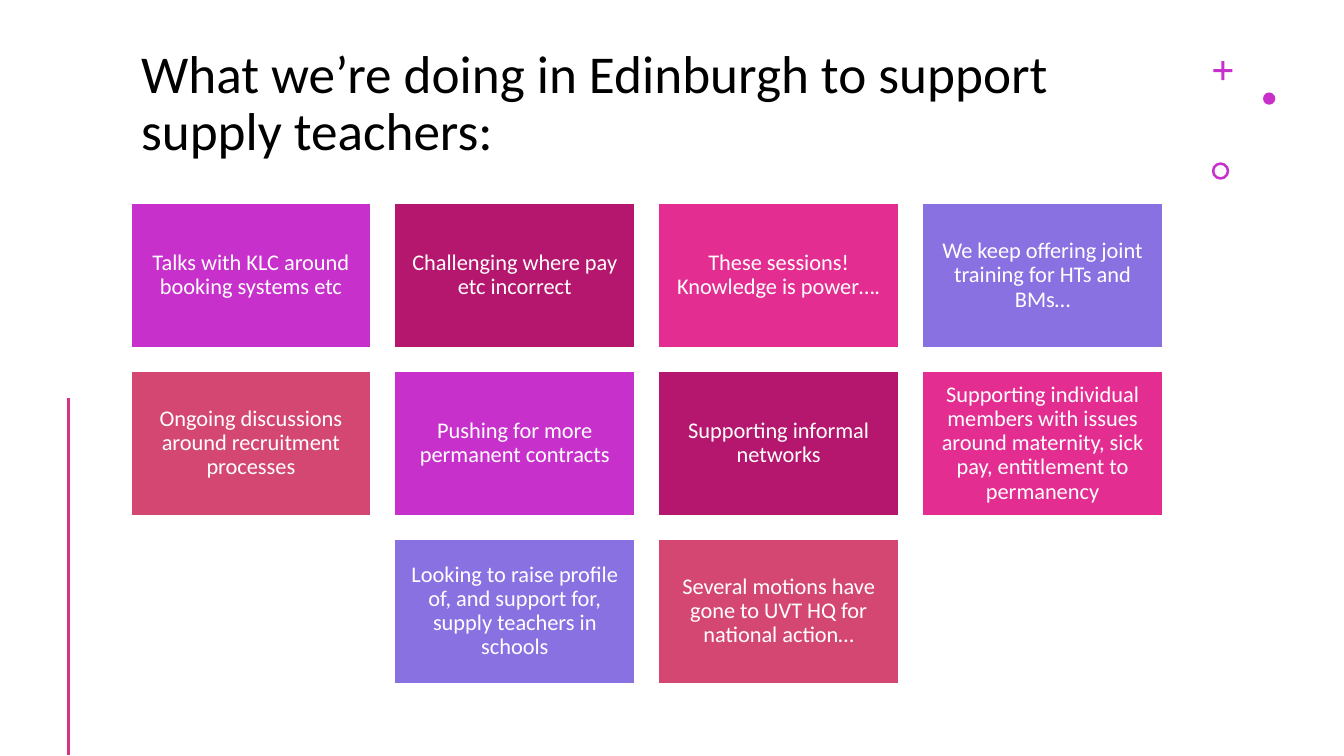
from lxml import etree
from pptx import Presentation
from pptx.dml.color import RGBColor
from pptx.enum import shapes, text
from pptx.oxml.ns import qn
from pptx.util import Cm, Pt

FONT = "Calibri"
PURPLE, RULE_PINK, WHITE = "C830CC", "D63384", "FFFFFF"
TITLE = "What we’re doing in Edinburgh to support supply teachers:"
ACTIONS = [
    "Talks with KLC around booking systems etc",
    "Challenging where pay etc incorrect",
    "These sessions! Knowledge is power….",
    "We keep offering joint training for HTs and BMs…",
    "Ongoing discussions around recruitment processes",
    "Pushing for more permanent contracts",
    "Supporting informal networks",
    "Supporting individual members with issues around maternity, sick pay, "
    "entitlement to permanency",
    "Looking to raise profile of, and support for, supply teachers in schools",
    "Several motions have gone to UVT HQ for national action…",
]
TILE_COLOURS = [PURPLE, "B4176D", "E32D91", "8971E1", "D54773"]

# Preset, left, top, size in cm, and adjustment
ORNAMENTS = [
    (shapes.MSO_SHAPE.CROSS, 30.58, 1.54, 0.48, 0.42),
    (shapes.MSO_SHAPE.OVAL, 31.83, 2.33, 0.31, None),
    (shapes.MSO_SHAPE.DONUT, 30.54, 4.09, 0.44, 0.15),
]

# Grid, in cm
COLUMNS = 4
LEFT, TOP = 3.3, 5.13
TILE_WIDTH, TILE_HEIGHT, GAP = 6.05, 3.63, 0.6
GRID_WIDTH = COLUMNS * TILE_WIDTH + (COLUMNS - 1) * GAP


def colour(value):
    return RGBColor.from_string(value)


def add_filled(slide, preset, left, top, width, height, fill):
    shape = slide.shapes.add_shape(preset, Cm(left), Cm(top), Cm(width), Cm(height))
    shape.shadow.inherit = False
    shape.fill.solid()
    shape.fill.fore_color.rgb = colour(fill)
    return shape


def write(shape, words, size, ink, align):
    frame = shape.text_frame
    frame.word_wrap = True
    frame.auto_size = text.MSO_AUTO_SIZE.NONE
    frame.vertical_anchor = text.MSO_ANCHOR.MIDDLE
    para = frame.paragraphs[0]
    para.text = words
    para.alignment = align
    para.line_spacing = 0.9
    para.font.name = FONT
    para.font.size = Pt(size)
    para.font.color.rgb = colour(ink)
    return frame


def add_title(slide):
    title = slide.shapes.title
    title.left, title.top = Cm(LEFT), Cm(0.97)
    title.width, title.height = Cm(GRID_WIDTH), Cm(3.33)
    write(title, TITLE, 38, "000000", text.PP_ALIGN.LEFT)


def add_decoration(slide):
    for preset, left, top, size, adjustment in ORNAMENTS:
        ornament = add_filled(slide, preset, left, top, size, size, PURPLE)
        ornament.line.fill.background()
        if adjustment is not None:
            ornament.adjustments[0] = adjustment

    rule = slide.shapes.add_connector(
        shapes.MSO_CONNECTOR.STRAIGHT, Cm(1.73), Cm(10.03), Cm(1.73), Cm(19.03))
    rule.line.color.rgb = colour(RULE_PINK)
    rule.line.width = Pt(2)
    etree.SubElement(rule._element.spPr, qn("a:effectLst"))


def add_tiles(slide):
    """Lay the actions out in rows, centring a row that is not full."""
    for index, action in enumerate(ACTIONS):
        row, column = divmod(index, COLUMNS)
        in_row = min(COLUMNS, len(ACTIONS) - row * COLUMNS)
        column += (COLUMNS - in_row) / 2
        tile = add_filled(
            slide, shapes.MSO_SHAPE.RECTANGLE,
            LEFT + column * (TILE_WIDTH + GAP), TOP + row * (TILE_HEIGHT + GAP),
            TILE_WIDTH, TILE_HEIGHT, TILE_COLOURS[index % len(TILE_COLOURS)])
        tile.line.color.rgb = colour(WHITE)
        tile.line.width = Pt(1)
        frame = write(tile, action, 16, WHITE, text.PP_ALIGN.CENTER)
        frame.margin_left = frame.margin_right = Cm(0.17)
        frame.margin_top = frame.margin_bottom = Cm(0.17)


def main():
    deck = Presentation()
    deck.slide_width, deck.slide_height = Cm(33.87), Cm(19.05)
    slide = deck.slides.add_slide(deck.slide_layouts[5])
    add_title(slide)
    add_decoration(slide)
    add_tiles(slide)
    deck.save("out.pptx")


if __name__ == "__main__":
    main()
